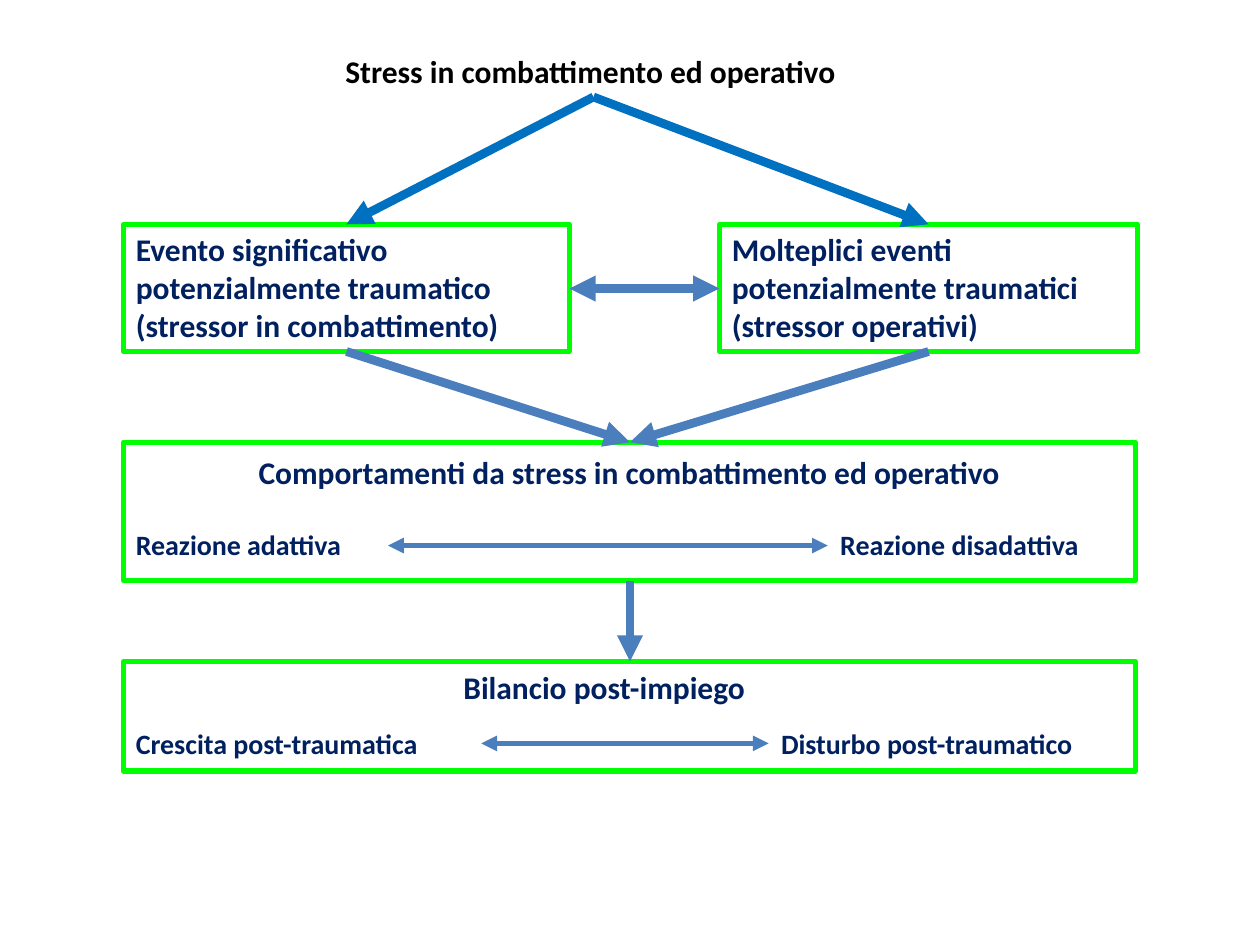
from pptx import Presentation
from pptx.dml.color import RGBColor
from pptx.enum import shapes, text
from pptx.oxml.ns import qn
from pptx.util import Inches, Pt
from lxml import etree

COLORS = {"title": "000000", "text": "002060", "frame": "00FF00",
          "cause": "0070C0", "effect": "4B7EBC"}

prs = Presentation()
prs.slide_width, prs.slide_height = Inches(10), Inches(7.5)
slide = prs.slides.add_slide(prs.slide_layouts[5])


def write(shape, wording, size=18, color="text", align=text.PP_ALIGN.LEFT):
    frame = shape.text_frame
    frame.text = wording
    frame.word_wrap = True
    frame.auto_size = text.MSO_AUTO_SIZE.NONE
    frame.vertical_anchor = text.MSO_ANCHOR.TOP
    for paragraph in frame.paragraphs:
        paragraph.alignment = align
        font = paragraph.runs[0].font
        font.name, font.size, font.bold = "Calibri", Pt(size), True
        font.color.rgb = RGBColor.from_string(COLORS[color])


def add_arrow(start, end, color="effect", width=5, both_ways=False):
    arrow = slide.shapes.add_connector(
        shapes.MSO_CONNECTOR.STRAIGHT, *map(Inches, start + end))
    arrow.line.color.rgb = RGBColor.from_string(COLORS[color])
    arrow.line.width = Pt(width)
    line = arrow.line._get_or_add_ln()
    for tag in ("a:headEnd", "a:tailEnd") if both_ways else ("a:tailEnd",):
        etree.SubElement(line, qn(tag), type="triangle")
    etree.SubElement(arrow._element.spPr, qn("a:effectLst"))


# Frames: two kinds of event above, behaviours and outcome below
LEFT, WIDTH = 0.98, 8.03
EVENT_TOP, EVENT_HEIGHT = 1.78, 1.01
EVENT_BOTTOM = EVENT_TOP + EVENT_HEIGHT
BEHAVIOUR_TOP, BEHAVIOUR_HEIGHT = 3.51, 1.1
OUTCOME_TOP, OUTCOME_HEIGHT = 5.25, 0.87
events = [
    (LEFT, 3.54, "Evento significativo\npotenzialmente traumatico\n(stressor in combattimento)"),
    (5.71, 3.32, "Molteplici eventi\npotenzialmente traumatici\n(stressor operativi)"),
]
frames = [(left, EVENT_TOP, width, EVENT_HEIGHT, wording) for left, width, wording in events]
frames += [(LEFT, BEHAVIOUR_TOP, WIDTH, BEHAVIOUR_HEIGHT, ""),
           (LEFT, OUTCOME_TOP, WIDTH, OUTCOME_HEIGHT, "")]
for *place, wording in frames:
    frame = slide.shapes.add_shape(shapes.MSO_SHAPE.RECTANGLE, *map(Inches, place))
    frame.shadow.inherit = False
    frame.fill.background()
    frame.line.color.rgb = RGBColor.from_string(COLORS["frame"])
    frame.line.width = Pt(3)
    if wording:
        write(frame, wording)

# Title, headings and the two ends of each range
title = slide.shapes.title
title.left, title.top, title.width, title.height = map(Inches, (2.64, 0.36, 4.13, 0.4))
write(title, "Stress in combattimento ed operativo", color="title")

labels = [
    (LEFT, 3.55, WIDTH, 18, "Comportamenti da stress in combattimento ed operativo"),
    (LEFT, 4.14, 2.1, 16, "Reazione adattiva"),
    (6.57, 4.14, 2.42, 16, "Reazione disadattiva"),
    (3.58, OUTCOME_TOP, 2.84, 18, "Bilancio post-impiego"),
    (LEFT, 5.72, 2.84, 16, "Crescita post-traumatica"),
    (6.1, 5.72, 2.88, 16, "Disturbo post-traumatico"),
]
for left, top, width, size, wording in labels:
    label = slide.shapes.add_textbox(*map(Inches, (left, top, width, 0.4)))
    full_width = width == WIDTH
    write(label, wording, size,
          align=text.PP_ALIGN.CENTER if full_width else text.PP_ALIGN.LEFT)

# Arrows: from the title through both events to the behaviours and the outcome
CENTER = 5
for left, width, _ in events:
    middle = left + width / 2
    add_arrow((4.71, 0.77), (middle, EVENT_TOP), "cause")
    add_arrow((middle, EVENT_BOTTOM), (CENTER, BEHAVIOUR_TOP))
add_arrow((CENTER, BEHAVIOUR_TOP + BEHAVIOUR_HEIGHT), (CENTER, OUTCOME_TOP))

for start, end, y, width in [(4.52, 5.71, 2.29, 5), (3.08, 6.57, 4.33, 3), (3.82, 6.1, 5.9, 3)]:
    add_arrow((start, y), (end, y), width=width, both_ways=True)

prs.save("out.pptx")
